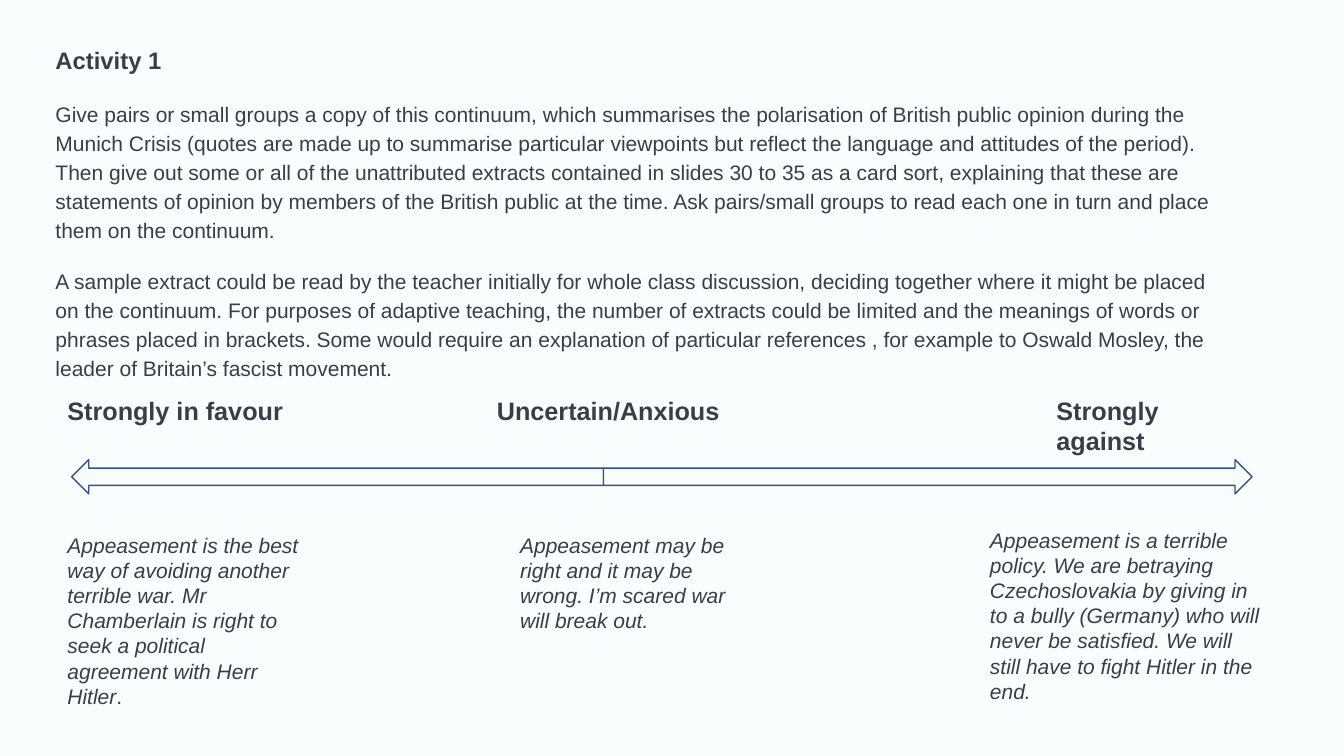
from lxml import etree
from pptx import Presentation
from pptx import util as u
from pptx.dml import color
from pptx.enum import shapes, text
from pptx.oxml import ns

WIDTH, HEIGHT = 13.33, 7.5
BACKGROUND, INK, OUTLINE = "FAFDFE", "363F49", "31538F"
FONT = "Arial"
ARROW_START, ARROW_MIDDLE, ARROW_END = 5.33, 44.9, 93.17
ARROW_TOP, ARROW_HEIGHT = 60.8, 4.53
HEADING_TOP, HEADING_HEIGHT = 51.6, 5.33

INSTRUCTIONS = [
    "Give pairs or small groups a copy of this continuum, which summarises the polarisation of "
    "British public opinion during the Munich Crisis (quotes are made up to summarise particular "
    "viewpoints but reflect the language and attitudes of the period). Then give out some or all "
    "of the unattributed extracts contained in slides 30 to 35 as a card sort, explaining that "
    "these are statements of opinion by members of the British public at the time. Ask pairs/small "
    "groups to read each one in turn and place them on the continuum.",
    "A sample extract could be read by the teacher initially for whole class discussion, deciding "
    "together where it might be placed on the continuum. For purposes of adaptive teaching, the "
    "number of extracts could be limited and the meanings of words or phrases placed in brackets. "
    "Some would require an explanation of particular references , for example to Oswald Mosley, "
    "the leader of Britain’s fascist movement.",
]
HEADINGS = [
    (4.28, 18.08, "Strongly in favour"),
    (36.23, 18.9, "Uncertain/Anxious"),
    (77.87, 15.3, "Strongly against"),
]
QUOTES = [
    ((4.28, 69.73, 18.9, 21.6),
     "Appeasement is the best way of avoiding another terrible war. Mr Chamberlain is right to "
     "seek a political agreement with Herr Hitler", "."),
    ((37.96, 69.73, 17.7, 14.8),
     "Appeasement may be right and it may be wrong. I’m scared war will break out.", ""),
    ((72.92, 69.07, 22.13, 21.6),
     "Appeasement is a terrible policy. We are betraying Czechoslovakia by giving in to a bully "
     "(Germany) who will never be satisfied. We will still have to fight Hitler in the end.", ""),
]


def rgb(value):
    """Return the colour for a hex string."""
    return color.RGBColor.from_string(value)


def area(left, top, width, height):
    """Turn percentages of the slide into left, top, width and height."""
    return [u.Inches(share * side / 100) for share, side in
            zip((left, top, width, height), (WIDTH, HEIGHT, WIDTH, HEIGHT))]


def add_run(paragraph, words, size, bold=False, italic=False):
    """Append one formatted run to a paragraph."""
    run = paragraph.add_run()
    run.text = words
    run.font.name = FONT
    run.font.size = u.Pt(size)
    run.font.bold = bold
    run.font.italic = italic
    run.font.color.rgb = rgb(INK)


def add_text_box(slide, place):
    """Add a wrapping text box and return its first paragraph."""
    frame = slide.shapes.add_textbox(*area(*place)).text_frame
    frame.word_wrap = True
    return frame.paragraphs[0]


def add_arrow(slide, kind, start, end):
    """Add one outlined half of the continuum."""
    arrow = slide.shapes.add_shape(
        kind, *area(start, ARROW_TOP, end - start, ARROW_HEIGHT))
    arrow.shadow.inherit = False
    arrow.fill.solid()
    arrow.fill.fore_color.rgb = rgb(BACKGROUND)
    arrow.line.color.rgb = rgb(OUTLINE)
    arrow.line.width = u.Pt(1)


def format_paragraph(paragraph, line_spacing, before, after=0):
    """Set paragraph spacing and take away the bullet."""
    paragraph.line_spacing = line_spacing
    paragraph.space_before = u.Pt(before)
    paragraph.space_after = u.Pt(after)
    properties = paragraph._p.get_or_add_pPr()
    properties.set("marL", "0")
    properties.set("indent", "0")
    etree.SubElement(properties, ns.qn("a:buNone"))


def fill_body(body):
    """Place the body and write the activity instructions in it."""
    body.left, body.top, body.width, body.height = area(3.38, 5.87, 89.27, 35.47)
    frame = body.text_frame
    frame.auto_size = text.MSO_AUTO_SIZE.NONE
    frame.vertical_anchor = text.MSO_ANCHOR.TOP
    heading = frame.paragraphs[0]
    format_paragraph(heading, 0.9, 10)
    add_run(heading, "Activity 1", 17, bold=True)
    for words, after in zip(INSTRUCTIONS, (0, 16)):
        paragraph = frame.add_paragraph()
        format_paragraph(paragraph, 1.15, 16, after)
        add_run(paragraph, words, 15)


def main():
    """Build the continuum activity slide."""
    presentation = Presentation()
    presentation.slide_width = u.Inches(WIDTH)
    presentation.slide_height = u.Inches(HEIGHT)
    slide = presentation.slides.add_slide(presentation.slide_layouts[1])
    slide.background.fill.solid()
    slide.background.fill.fore_color.rgb = rgb(BACKGROUND)
    title = slide.shapes.title.element
    title.getparent().remove(title)
    fill_body(slide.placeholders[1])

    add_arrow(slide, shapes.MSO_SHAPE.LEFT_ARROW, ARROW_START, ARROW_MIDDLE)
    add_arrow(slide, shapes.MSO_SHAPE.RIGHT_ARROW, ARROW_MIDDLE, ARROW_END)
    for left, width, words in HEADINGS:
        paragraph = add_text_box(slide, (left, HEADING_TOP, width, HEADING_HEIGHT))
        add_run(paragraph, words, 18, bold=True)
    for place, words, ending in QUOTES:
        paragraph = add_text_box(slide, place)
        add_run(paragraph, words, 15, italic=True)
        if ending:
            add_run(paragraph, ending, 15)
    presentation.save("out.pptx")


if __name__ == "__main__":
    main()
